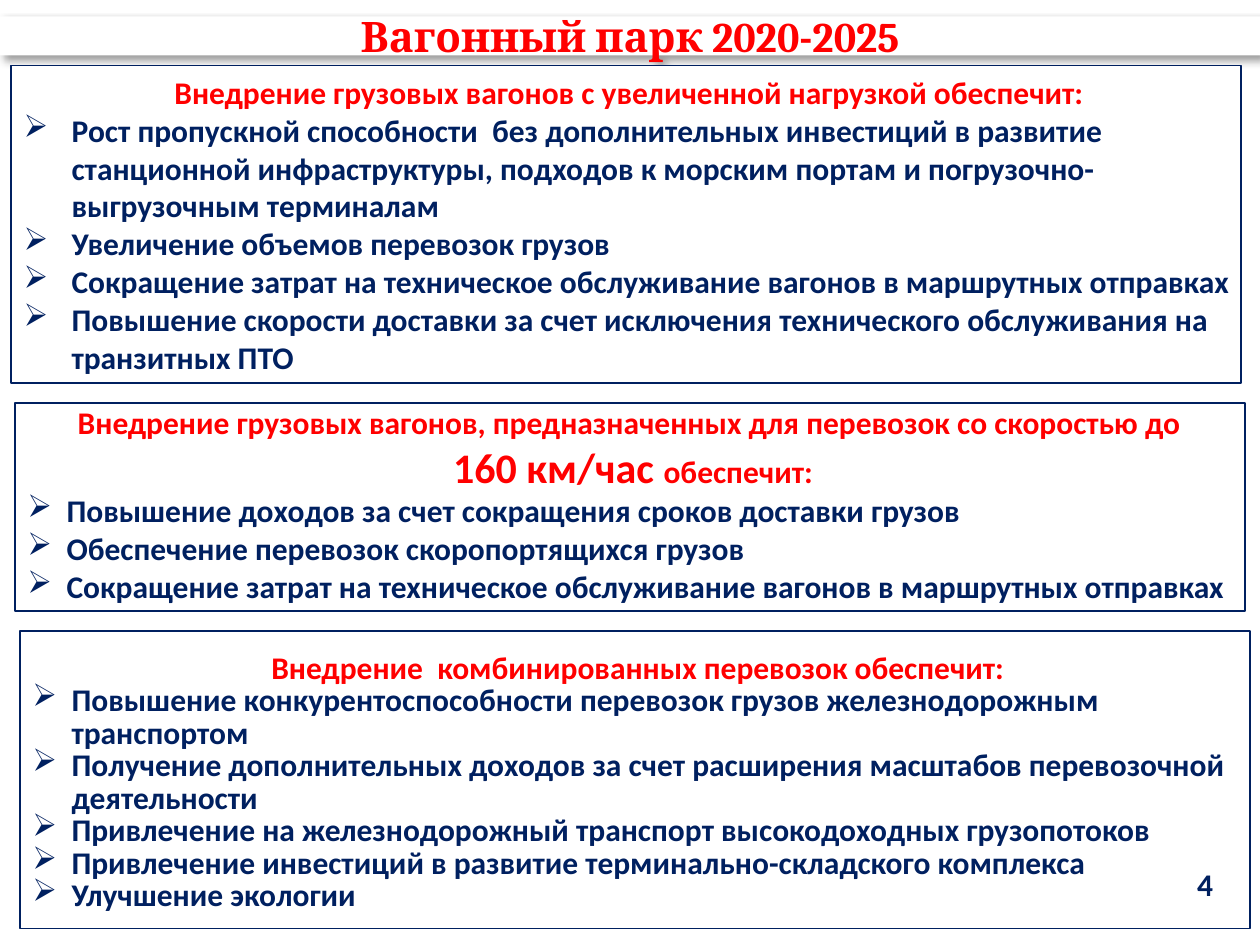
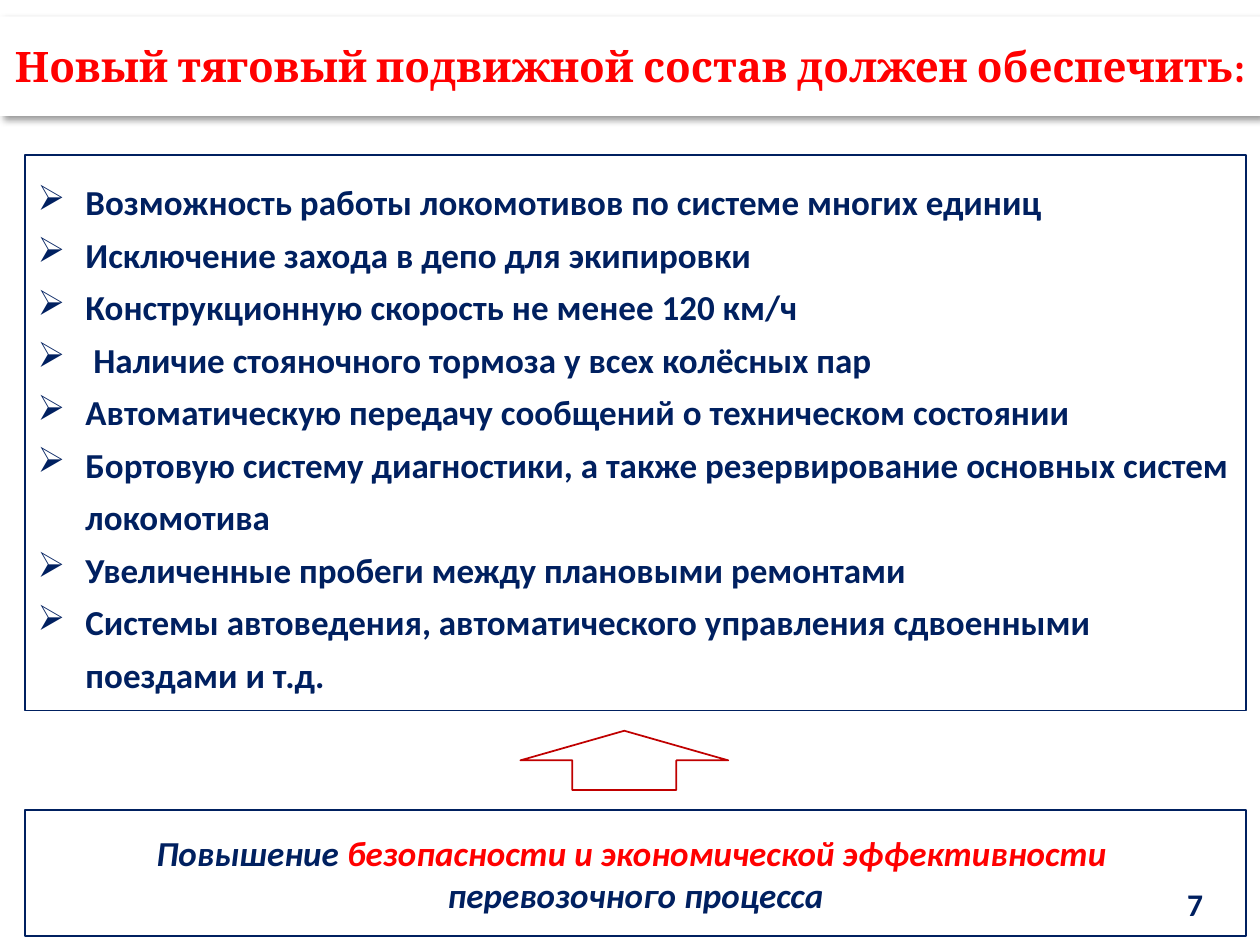
from lxml.etree import SubElement
from pptx import Presentation
from pptx.dml.color import RGBColor
from pptx.enum.shapes import MSO_SHAPE
from pptx.enum.text import MSO_ANCHOR, PP_ALIGN
from pptx.oxml import parse_xml
from pptx.oxml.ns import qn
from pptx.util import Inches, Pt

NAVY, RED, WHITE, ARROW_RED = "002060", "FF0000", "FFFFFF", "C00000"
TITLE_SHADOW = (
    '<a:effectLst xmlns:a="http://schemas.openxmlformats.org/drawingml/2006/main">'
    '<a:outerShdw blurRad="50800" dist="38100" dir="2700000" algn="tl" rotWithShape="0">'
    '<a:srgbClr val="000000"><a:alpha val="40000"/></a:srgbClr>'
    '</a:outerShdw></a:effectLst>'
)


def add_shape(page, area, kind=MSO_SHAPE.RECTANGLE, line=None):
    shape = page.shapes.add_shape(kind, *[Inches(length) for length in area])
    shape.shadow.inherit = False
    shape.fill.solid()
    shape.fill.fore_color.rgb = RGBColor.from_string(WHITE)
    if line:
        shape.line.color.rgb = RGBColor.from_string(line)
        shape.line.width = Pt(1)
    else:
        shape.line.fill.background()
    shape.text_frame.word_wrap = True
    shape.text_frame.vertical_anchor = MSO_ANCHOR.MIDDLE
    return shape


def add_text(box, text, size=18, color=NAVY, font="Calibri", italic=False,
             indent=None, spacing=None, joined=False):
    frame = box.text_frame
    if joined or not frame.text:
        para = frame.paragraphs[-1]
    else:
        para = frame.add_paragraph()
    para.alignment = PP_ALIGN.LEFT if indent else PP_ALIGN.CENTER
    if spacing:
        para.line_spacing = Pt(spacing)
    if indent:
        properties = para._p.get_or_add_pPr()
        properties.set("marL", str(Inches(indent)))
        properties.set("indent", str(-Inches(indent)))
        SubElement(properties, qn("a:buChar")).set("char", "➢")
    span = para.add_run()
    span.text = text
    span.font.size = Pt(size)
    span.font.name = font
    span.font.bold = True
    span.font.italic = italic
    span.font.color.rgb = RGBColor.from_string(color)


deck = Presentation()
deck.slide_width, deck.slide_height = Inches(10), Inches(7.5)

pages = []
for title, title_height in [
    ("Вагонный парк 2020-2025", 0.31),
    ("Новый тяговый подвижной состав должен обеспечить:", 0.79),
]:
    page = deck.slides.add_slide(deck.slide_layouts[6])
    band = add_shape(page, (0, 0.13, 10, title_height))
    band._element.spPr.remove(band._element.spPr.find(qn("a:effectLst")))
    band._element.spPr.append(parse_xml(TITLE_SHADOW))
    frame = band.text_frame
    frame.margin_left = frame.margin_right = Inches(0.06)
    frame.margin_top = frame.margin_bottom = Inches(0.03)
    add_text(band, title, size=24, color=RED, font="Cambria")
    pages.append(page)
wagons_page, locomotives_page = pages

wagon_panels = [
    ((0.09, 0.52, 9.76, 2.52), 0.06, 0.38, None,
     [[("Внедрение грузовых вагонов с увеличенной нагрузкой обеспечит:", 18)]],
     ["Рост пропускной способности  без дополнительных инвестиций в развитие станционной "
      "инфраструктуры, подходов к морским портам и погрузочно-выгрузочным терминалам",
      "Увеличение объемов перевозок грузов",
      "Сокращение затрат на техническое обслуживание вагонов в маршрутных отправках",
      "Повышение скорости доставки за счет исключения технического обслуживания на "
      "транзитных ПТО"]),
    ((0.12, 3.2, 9.76, 1.65), 0, 0.31, None,
     [[("Внедрение грузовых вагонов, предназначенных для перевозок со скоростью до ", 18)],
      [("160 км/час ", 24), ("обеспечит:", 18)]],
     ["Повышение доходов за счет сокращения сроков доставки грузов",
      "Обеспечение перевозок скоропортящихся грузов",
      "Сокращение затрат на техническое обслуживание вагонов в маршрутных отправках"]),
    ((0.16, 5.01, 9.76, 2.36), 0.13, 0.31, 18.6,
     [[("Внедрение  комбинированных перевозок обеспечит:", 18)]],
     ["Повышение конкурентоспособности перевозок грузов железнодорожным транспортом",
      "Получение дополнительных доходов за счет расширения масштабов перевозочной "
      "деятельности",
      "Привлечение на железнодорожный транспорт высокодоходных грузопотоков",
      "Привлечение инвестиций в развитие терминально-складского комплекса",
      "Улучшение экологии"]),
]
for area, top_margin, indent, spacing, headings, benefits in wagon_panels:
    panel = add_shape(wagons_page, area, line=NAVY)
    panel.text_frame.vertical_anchor = MSO_ANCHOR.TOP
    panel.text_frame.margin_top = Inches(top_margin)
    panel.text_frame.margin_right = Inches(0.05)
    for heading in headings:
        for position, (text, size) in enumerate(heading):
            add_text(panel, text, size=size, color=RED, joined=position > 0)
    for benefit in benefits:
        add_text(panel, benefit, indent=indent, spacing=spacing)

requirements = add_shape(locomotives_page, (0.2, 1.23, 9.69, 4.41), line=NAVY)
for requirement in [
    "Возможность работы локомотивов по системе многих единиц",
    "Исключение захода в депо для экипировки",
    "Конструкционную скорость не менее 120 км/ч",
    " Наличие стояночного тормоза у всех колёсных пар",
    "Автоматическую передачу сообщений о техническом состоянии",
    "Бортовую систему диагностики, а также резервирование основных систем локомотива",
    "Увеличенные пробеги между плановыми ремонтами",
    "Системы автоведения, автоматического управления сдвоенными поездами и т.д.",
]:
    add_text(requirements, requirement, size=20, indent=0.38, spacing=30)

goal = add_shape(locomotives_page, (0.2, 6.43, 9.69, 1), line=NAVY)
add_text(goal, "Повышение ", size=20, italic=True)
add_text(goal, "безопасности и экономической эффективности ", size=20, color=RED,
         italic=True, joined=True)
add_text(goal, "перевозочного процесса", size=20, italic=True)
add_shape(locomotives_page, (4.13, 5.8, 1.65, 0.47), MSO_SHAPE.UP_ARROW, ARROW_RED)

for page, number, left, top in [
    (wagons_page, "4", 9.33, 6.82),
    (locomotives_page, "7", 9.25, 6.98),
]:
    add_text(add_shape(page, (left, top, 0.47, 0.39)), number)

deck.save("out.pptx")
